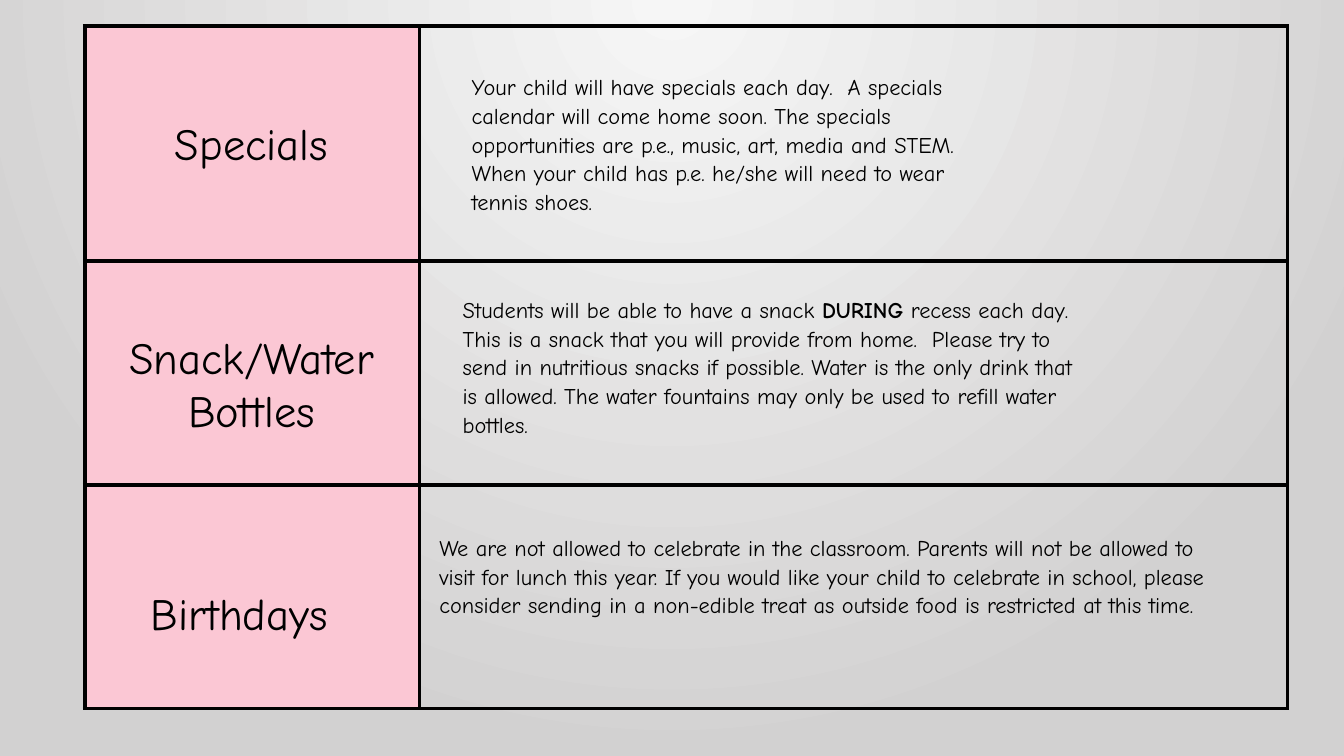
from dataclasses import dataclass

from lxml import etree
from pptx import Presentation
from pptx.dml.color import RGBColor
from pptx.enum import text
from pptx.oxml.ns import qn
from pptx.util import Inches, Pt


@dataclass(frozen=True)
class Theme:
    font: str = "Comic Neue"
    ink: RGBColor = RGBColor(0x00, 0x00, 0x00)
    pink: RGBColor = RGBColor(0xFB, 0xC7, 0xD4)
    glow: RGBColor = RGBColor(0xF6, 0xF6, 0xF6)
    gray: RGBColor = RGBColor(0xD2, 0xD1, 0xD1)
    topic_size: float = 31.8
    body_size: float = 16
    border: float = 3


THEME = Theme()
COLUMN_WIDTHS = (3.32, 8.61)
ROW_HEIGHTS = (2.33, 2.22, 2.22)

# Each topic: name, box; each detail: runs as (words, bold), box
TOPICS = [
    ("Specials", (0.87, 1.1, 3.25, 0.64)),
    ("Snack/Water Bottles", (0.87, 3.22, 3.25, 1.17)),
    ("Birthdays", (0.75, 5.76, 3.25, 0.64)),
]
DETAILS = [
    ([("Your child will have specials each day.  A specials calendar will "
       "come home soon. The specials opportunities are p.e., music, art, "
       "media and STEM.  When your child has p.e. he/she will need to wear "
       "tennis shoes.", False)], (4.58, 0.66, 5.1, 1.53)),
    ([("Students will be able to have a snack ", False),
      ("DURING", True),
      (" recess each day. This is a snack that you will provide from home.  "
       "Please try to send in nutritious snacks if possible. Water is the "
       "only drink that is allowed. The water fountains may only be used to "
       "refill water bottles.", False)], (4.49, 2.87, 6.28, 1.53)),
    ([("We are not allowed to celebrate in the classroom. Parents will not "
       "be allowed to visit for lunch this year. If you would like your "
       "child to celebrate in school, please consider sending in a "
       "non-edible treat as outside food is restricted at this time.",
       False)], (4.26, 5.23, 7.97, 1.24)),
]


def set_background(slide):
    """Radial gradient that glows from the middle of the top edge."""
    fill = slide.background.fill
    fill.gradient()
    for stop, color in zip(fill.gradient_stops, (THEME.glow, THEME.gray)):
        stop.color.rgb = color
    gradient = slide.element.find(".//" + qn("a:gradFill"))
    linear = gradient.find(qn("a:lin"))
    radial = etree.Element(qn("a:path"), path="circle")
    etree.SubElement(radial, qn("a:fillToRect"),
                     l="43000", t="0", r="43000", b="100000")
    gradient.replace(linear, radial)


def set_borders(cell):
    properties = cell._tc.get_or_add_tcPr()
    for index, side in enumerate(("a:lnL", "a:lnR", "a:lnT", "a:lnB")):
        line = etree.Element(qn(side), w=str(Pt(THEME.border)))
        solid = etree.SubElement(line, qn("a:solidFill"))
        etree.SubElement(solid, qn("a:srgbClr"), val=str(THEME.ink))
        properties.insert(index, line)


def add_grid(slide):
    frame = slide.shapes.add_table(
        len(ROW_HEIGHTS), len(COLUMN_WIDTHS), Inches(0.84), Inches(0.26),
        Inches(sum(COLUMN_WIDTHS)), Inches(sum(ROW_HEIGHTS)))
    table = frame.table
    table.first_row = table.horz_banding = False
    for column, width in zip(table.columns, COLUMN_WIDTHS):
        column.width = Inches(width)
    for row, height in zip(table.rows, ROW_HEIGHTS):
        row.height = Inches(height)
        topic, detail = row.cells
        topic.fill.solid()
        topic.fill.fore_color.rgb = THEME.pink
        detail.fill.background()
        for cell in (topic, detail):
            set_borders(cell)


def add_text(slide, runs, box, size):
    """Add a one-paragraph text box and return its paragraph."""
    shape = slide.shapes.add_textbox(*map(Inches, box))
    frame = shape.text_frame
    frame.word_wrap = True
    frame.auto_size = text.MSO_AUTO_SIZE.SHAPE_TO_FIT_TEXT
    paragraph = frame.paragraphs[0]
    paragraph.font.name = THEME.font
    paragraph.font.size = Pt(size)
    paragraph.font.color.rgb = THEME.ink
    for words, bold in runs:
        run = paragraph.add_run()
        run.text = words
        if bold:
            run.font.bold = True
    return paragraph


def add_topic(slide, name, box):
    paragraph = add_text(slide, [(name, False)], box, THEME.topic_size)
    paragraph.alignment = text.PP_ALIGN.CENTER


def add_detail(slide, runs, box):
    paragraph = add_text(slide, runs, box, THEME.body_size)
    paragraph.line_spacing = 1.07
    paragraph.space_after = Pt(7.1)


def main():
    presentation = Presentation()
    presentation.slide_width = Inches(13.33)
    presentation.slide_height = Inches(7.5)
    slide = presentation.slides.add_slide(presentation.slide_layouts[6])

    # Backdrop and table
    set_background(slide)
    add_grid(slide)

    # Text over the cells
    for name, box in TOPICS:
        add_topic(slide, name, box)
    for runs, box in DETAILS:
        add_detail(slide, runs, box)

    presentation.save("out.pptx")


if __name__ == "__main__":
    main()
